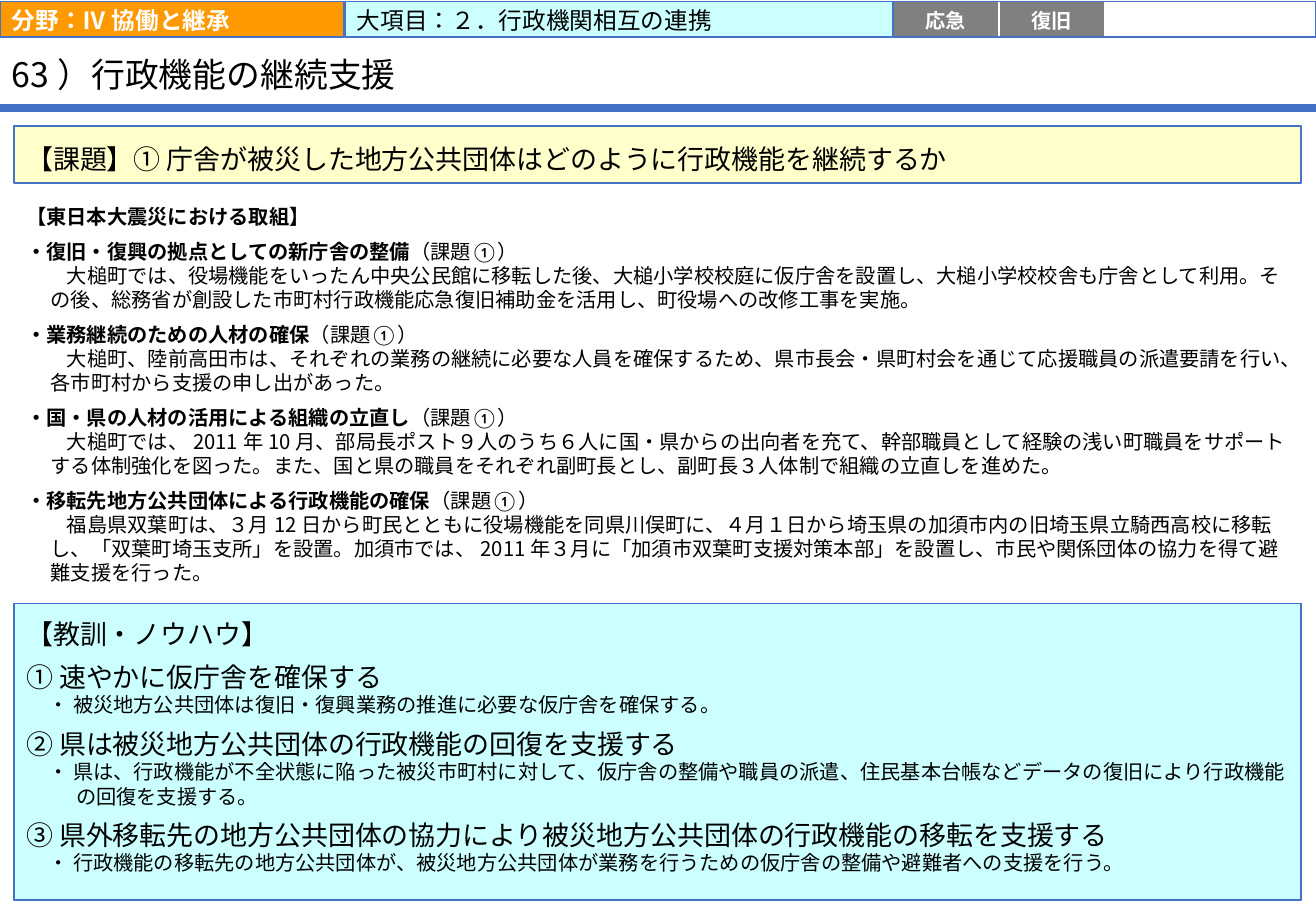
from dataclasses import dataclass

from lxml.etree import SubElement
from pptx import Presentation
from pptx.dml.color import RGBColor
from pptx.enum.shapes import MSO_CONNECTOR, MSO_SHAPE
from pptx.enum.text import MSO_ANCHOR, PP_ALIGN
from pptx.oxml.ns import qn
from pptx.util import Cm, Pt

COLORS = {"blue": "4472C4", "orange": "FF9900", "cyan": "CCFFFF", "yellow": "FFFFCC",
          "gray": "808080", "white": "FFFFFF", "black": "000000"}
LATIN, CJK = "Calibri", "Noto Sans CJK JP"
WIDTH, MARGIN, PANEL_W = 27.51, 0.3, 26.9
BAR_Y, BAR_H = 0.03, 0.74
PHASE_X, PHASE_W = 18.67, 2.21


@dataclass
class Run:
    text: str
    size: int = 12
    font: str = CJK
    bold: bool = False
    color: str = "black"


@dataclass
class Para:
    runs: list[Run]
    before: int = 0
    left: float = 0
    first: float = 0
    spacing: float | Pt | None = None
    align: PP_ALIGN = PP_ALIGN.LEFT


@dataclass
class Box:
    x: float
    y: float
    w: float
    h: float
    fill: str | None
    line: str | None
    paras: list[Para]
    insets: tuple[float, float, float, float] = (0.25, 0.05, 0.25, 0)
    anchor: MSO_ANCHOR = MSO_ANCHOR.MIDDLE


def rgb(name: str) -> RGBColor:
    """Return the named colour."""
    return RGBColor.from_string(COLORS[name])


def write(tf, paras: list[Para], insets: tuple, anchor: MSO_ANCHOR) -> None:
    """Fill a text frame with formatted paragraphs."""
    tf.word_wrap = True
    tf.vertical_anchor = anchor
    tf.margin_left, tf.margin_top, tf.margin_right, tf.margin_bottom = map(Cm, insets)
    for i, para in enumerate(paras):
        p = tf.add_paragraph() if i else tf.paragraphs[0]
        p.alignment = para.align
        p.space_before = Pt(para.before)
        if para.spacing:
            p.line_spacing = para.spacing
        pPr = p._p.get_or_add_pPr()
        pPr.set("marL", str(Cm(para.left)))
        pPr.set("indent", str(Cm(para.first)))
        for run in para.runs:
            r = p.add_run()
            r.text = run.text
            r.font.size, r.font.bold, r.font.name = Pt(run.size), run.bold, run.font
            r.font.color.rgb = rgb(run.color)
            rPr = r._r.get_or_add_rPr()
            rPr.set("lang", "ja-JP")
            SubElement(rPr, qn("a:ea")).set("typeface", run.font)


def draw_box(s, box: Box) -> None:
    """Draw a rectangle with its text."""
    sp = s.shapes.add_shape(MSO_SHAPE.RECTANGLE, Cm(box.x), Cm(box.y), Cm(box.w), Cm(box.h))
    sp.shadow.inherit = False
    if box.fill:
        sp.fill.solid()
        sp.fill.fore_color.rgb = rgb(box.fill)
    else:
        sp.fill.background()
    if box.line:
        sp.line.color.rgb = rgb(box.line)
        sp.line.width = Pt(1)
    else:
        sp.line.fill.background()
    write(sp.text_frame, box.paras, box.insets, box.anchor)


def draw_rule(s, y: float) -> None:
    """Draw the full-width rule below the title."""
    cx = s.shapes.add_connector(MSO_CONNECTOR.STRAIGHT, Cm(0), Cm(y), Cm(WIDTH), Cm(y))
    cx.line.color.rgb = rgb("blue")
    cx.line.width = Pt(4.5)
    SubElement(cx._element.spPr, qn("a:effectLst"))


def effort(heading: str, detail: str) -> list[Para]:
    """Return the paragraphs of one effort."""
    return [Para([Run(heading, font=LATIN, bold=True), Run("（課題①）", font=LATIN)], before=6),
            Para([Run(detail)], left=0.51, first=0.34)]


def lesson(heading: str, detail: str) -> list[Para]:
    """Return the paragraphs of one lesson."""
    return [Para([Run(heading, 16)], before=6),
            Para([Run("・ " + detail)], left=1.04, first=-0.58)]


def phase(i: int, label: str) -> Box:
    """Return one cell of the phase strip."""
    paras = [Para([Run(label, 12, LATIN, True, "white")], align=PP_ALIGN.CENTER)] if label else []
    return Box(PHASE_X + i * PHASE_W, BAR_Y, PHASE_W, BAR_H, "gray" if label else "white",
               "white", paras, (0, 0.05, 0, 0))


EFFORTS = [
    ("・復旧・復興の拠点としての新庁舎の整備",
     "大槌町では、役場機能をいったん中央公民館に移転した後、大槌小学校校庭に仮庁舎を設置し、"
     "大槌小学校校舎も庁舎として利用。その後、総務省が創設した市町村行政機能応急復旧補助金を活用し、"
     "町役場への改修工事を実施。"),
    ("・業務継続のための人材の確保",
     "大槌町、陸前高田市は、それぞれの業務の継続に必要な人員を確保するため、県市長会・県町村会を通じて"
     "応援職員の派遣要請を行い、各市町村から支援の申し出があった。"),
    ("・国・県の人材の活用による組織の立直し",
     "大槌町では、2011年10月、部局長ポスト９人のうち６人に国・県からの出向者を充て、幹部職員として"
     "経験の浅い町職員をサポートする体制強化を図った。また、国と県の職員をそれぞれ副町長とし、"
     "副町長３人体制で組織の立直しを進めた。"),
    ("・移転先地方公共団体による行政機能の確保",
     "福島県双葉町は、３月12日から町民とともに役場機能を同県川俣町に、４月１日から埼玉県の加須市内の"
     "旧埼玉県立騎西高校に移転し、「双葉町埼玉支所」を設置。加須市では、2011年３月に"
     "「加須市双葉町支援対策本部」を設置し、市民や関係団体の協力を得て避難支援を行った。"),
]
LESSONS = [
    ("① 速やかに仮庁舎を確保する",
     "被災地方公共団体は復旧・復興業務の推進に必要な仮庁舎を確保する。"),
    ("② 県は被災地方公共団体の行政機能の回復を支援する",
     "県は、行政機能が不全状態に陥った被災市町村に対して、仮庁舎の整備や職員の派遣、"
     "住民基本台帳などデータの復旧により行政機能の回復を支援する。"),
    ("③ 県外移転先の地方公共団体の協力により被災地方公共団体の行政機能の移転を支援する",
     "行政機能の移転先の地方公共団体が、被災地方公共団体が業務を行うための仮庁舎の整備や"
     "避難者への支援を行う。"),
]
EFFORT_PARAS = [Para([Run("【東日本大震災における取組】", font=LATIN, bold=True)])]
EFFORT_PARAS += [para for item in EFFORTS for para in effort(*item)]
LESSON_PARAS = [Para([Run("【教訓・ノウハウ】", 16)])]
LESSON_PARAS += [para for item in LESSONS for para in lesson(*item)]
ISSUE = Run("【課題】① 庁舎が被災した地方公共団体はどのように行政機能を継続するか", 16)

BOXES = [
    Box(MARGIN, 4.24, PANEL_W, 8.03, "white", None, EFFORT_PARAS, (0.25, 0.13, 0.25, 0.13)),
    Box(0, BAR_Y, 7.19, BAR_H, "orange", "blue",
        [Para([Run("分野：Ⅳ 協働と継承", 14, LATIN, True, "white")])]),
    Box(7.21, BAR_Y, 11.51, BAR_H, "cyan", "blue",
        [Para([Run("大項目：２．行政機関相互の連携", 14, LATIN)])]),
    Box(MARGIN, 2.64, PANEL_W, 1.19, "yellow", "blue",
        [Para([ISSUE], spacing=Pt(24))], (0.25, 0.3, 0.25, 0.3)),
    Box(MARGIN, 12.62, PANEL_W, 6.2, "cyan", "blue", LESSON_PARAS,
        (0.25, 0.3, 0.25, 0), MSO_ANCHOR.TOP),
    *[phase(i, label) for i, label in enumerate(["応急", "復旧", "", ""])],
    Box(PHASE_X, BAR_Y, 4 * PHASE_W, BAR_H, None, "blue", []),
]


def main() -> None:
    """Build the slide and save it."""
    prs = Presentation()
    prs.slide_width, prs.slide_height = Cm(WIDTH), Cm(19.05)
    s = prs.slides.add_slide(prs.slide_layouts[5])
    title = s.shapes.title
    title.left, title.top, title.width, title.height = Cm(0), Cm(0.81), Cm(24.08), Cm(1.47)
    write(title.text_frame, [Para([Run("63）行政機能の継続支援", 20)], spacing=0.9)],
          (0.25, 0.1, 0.25, 0), MSO_ANCHOR.MIDDLE)
    draw_rule(s, 2.26)
    for box in BOXES:
        draw_box(s, box)
    prs.save("out.pptx")


if __name__ == "__main__":
    main()
